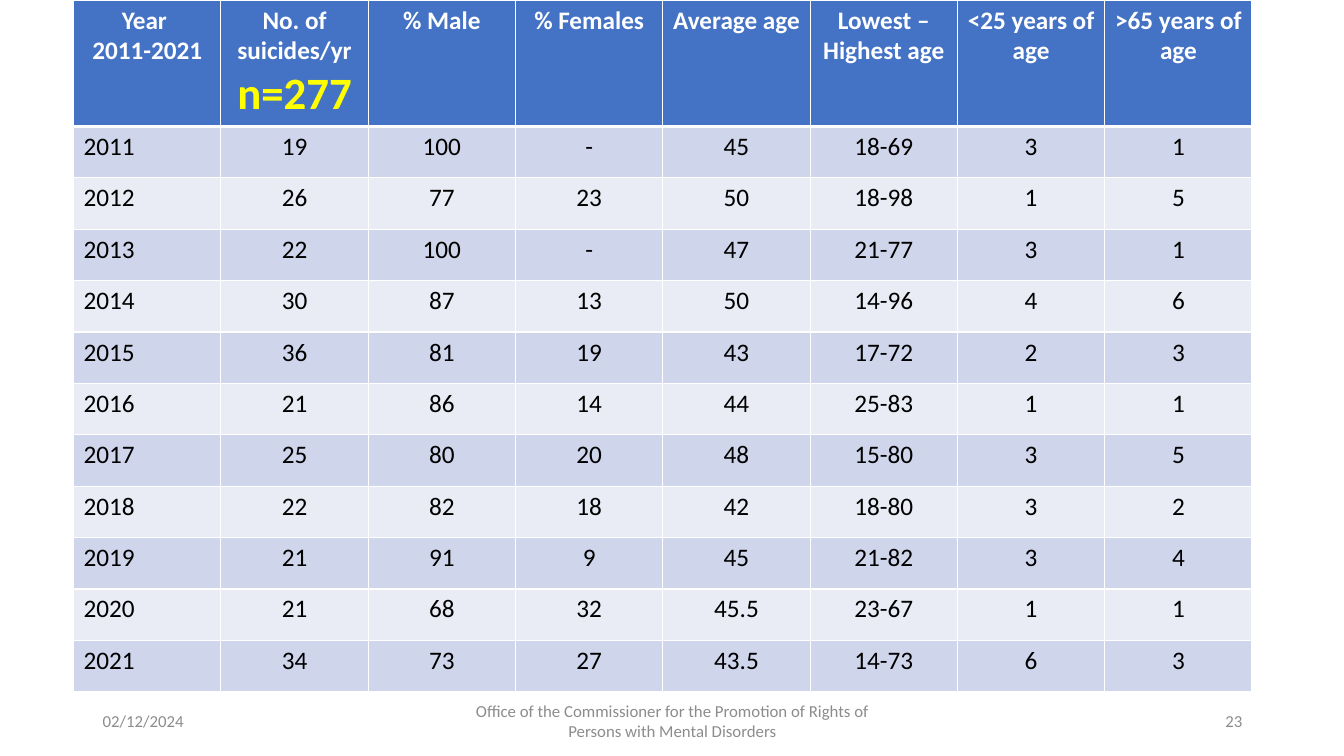
from lxml import etree
from pptx import Presentation
from pptx.dml.color import RGBColor
from pptx.enum import text
from pptx.oxml import ns
from pptx.util import Inches, Pt

COLORS = {"header": "4472C4", "odd": "CFD5EA", "even": "E9EBF5", "white": "FFFFFF",
          "black": "000000", "total": "FFFF00", "footer": "8C8C8C"}
LEFT, CENTER, RIGHT = text.PP_ALIGN.LEFT, text.PP_ALIGN.CENTER, text.PP_ALIGN.RIGHT

# Content: each header is a list of paragraphs
HEADERS = [["Year ", "2011-2021"], ["No. of suicides/yr "], ["% Male"], ["% Females"],
           ["Average age"], ["Lowest –Highest age"], ["<25 years of age"], [">65 years of age"]]
TOTAL = "n=277"
TOTAL_COLUMN = 1
YEARS = [
    ("2011", "19", "100", "-", "45", "18-69", "3", "1"),
    ("2012", "26", "77", "23", "50", "18-98", "1", "5"),
    ("2013", "22", "100", "-", "47", "21-77", "3", "1"),
    ("2014", "30", "87", "13", "50", "14-96", "4", "6"),
    ("2015", "36", "81", "19", "43", "17-72", "2", "3"),
    ("2016", "21", "86", "14", "44", "25-83", "1", "1"),
    ("2017", "25", "80", "20", "48", "15-80", "3", "5"),
    ("2018", "22", "82", "18", "42", "18-80", "3", "2"),
    ("2019", "21", "91", "9", "45", "21-82", "3", "4"),
    ("2020", "21", "68", "32", "45.5", "23-67", "1", "1"),
    ("2021", "34", "73", "27", "43.5", "14-73", "6", "3"),
]
FOOTERS = [  # text, left, width, alignment
    ("02/12/2024", 0.92, 3, LEFT),
    ("Office of the Commissioner for the Promotion of Rights of Persons with Mental Disorders",
     4.42, 4.5, CENTER),
    ("23", 9.42, 3, RIGHT),
]
TABLE_LEFT, TABLE_WIDTH = 0.73, 11.69
HEADER_HEIGHT, ROW_HEIGHT = 1.24, 0.51


def add_span(para, words, size, color, bold=False):
    span = para.add_run()
    span.text = words
    span.font.name = "Calibri"
    span.font.size = Pt(size)
    span.font.bold = bold
    span.font.color.rgb = RGBColor.from_string(COLORS[color])


def fill_cell(cell, lines, fill, color, align, bold=False, bottom=1):
    # Borders come before the fill in the cell properties
    properties = cell._tc.get_or_add_tcPr()
    for side, width in (("L", 1), ("R", 1), ("T", 1), ("B", bottom)):
        line = etree.SubElement(properties, ns.qn("a:ln" + side), w=str(Pt(width)))
        solid = etree.SubElement(line, ns.qn("a:solidFill"))
        etree.SubElement(solid, ns.qn("a:srgbClr"), val=COLORS["white"])
    cell.fill.solid()
    cell.fill.fore_color.rgb = RGBColor.from_string(COLORS[fill])
    for index, words in enumerate(lines):
        frame = cell.text_frame
        para = frame.add_paragraph() if index else frame.paragraphs[0]
        para.alignment = align
        add_span(para, words, 18, color, bold)


deck = Presentation()
deck.slide_width, deck.slide_height = Inches(13.33), Inches(7.5)
page = deck.slides.add_slide(deck.slide_layouts[6])

# Table of yearly figures
table_height = HEADER_HEIGHT + ROW_HEIGHT * len(YEARS)
table = page.shapes.add_table(len(YEARS) + 1, len(HEADERS), Inches(TABLE_LEFT), 0,
                              Inches(TABLE_WIDTH), Inches(table_height)).table
for column in table.columns:
    column.width = Inches(TABLE_WIDTH / len(HEADERS))
for index, row in enumerate(table.rows):
    row.height = Inches(ROW_HEIGHT if index else HEADER_HEIGHT)

for column, lines in enumerate(HEADERS):
    fill_cell(table.cell(0, column), lines, "header", "white", CENTER, bold=True, bottom=3)
add_span(table.cell(0, TOTAL_COLUMN).text_frame.paragraphs[0], TOTAL, 32, "total", bold=True)

for index, values in enumerate(YEARS, start=1):
    for column, value in enumerate(values):
        fill_cell(table.cell(index, column), [value], "odd" if index % 2 else "even",
                  "black", CENTER if column else LEFT)

# Footer: date, office, page number
for words, left, width, align in FOOTERS:
    box = page.shapes.add_textbox(Inches(left), Inches(6.95), Inches(width), Inches(0.4))
    frame = box.text_frame
    frame.word_wrap = True
    frame.vertical_anchor = text.MSO_ANCHOR.MIDDLE
    para = frame.paragraphs[0]
    para.alignment = align
    add_span(para, words, 12, "footer")

deck.save("out.pptx")
